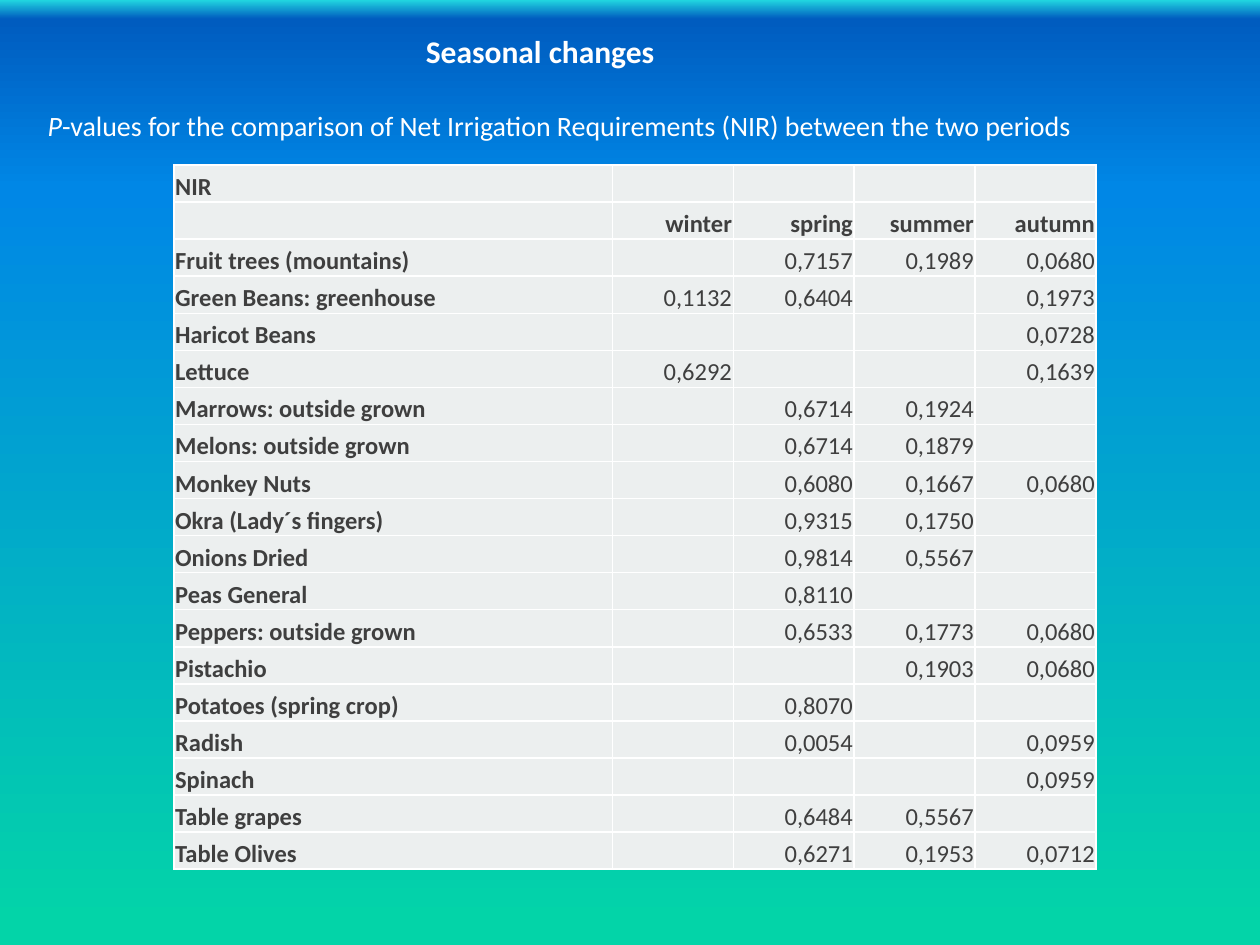
from pptx import Presentation
from pptx.dml.color import RGBColor as RGB
from pptx.enum.text import MSO_ANCHOR as Anchor, MSO_AUTO_SIZE as Fit, PP_ALIGN as Align
from pptx.oxml.ns import qn
from pptx.util import Inches as In, Pt
from lxml.etree import SubElement as Sub

WHITE = RGB(0xFF, 0xFF, 0xFF)
INK = RGB(0x3F, 0x3F, 0x3F)
PALE = RGB(0xEC, 0xEF, 0xEF)
# Background stops: percent and colour
STOPS = [(0, RGB(0x21, 0xD6, 0xE0)), (2, RGB(0x00, 0x5C, 0xBF)),
         (20, RGB(0x00, 0x87, 0xE6)), (98, RGB(0x03, 0xD4, 0xA8))]
FONT = "Calibri"

# Table geometry in inches
LEFT, TOP, HIGH = 1.38, 1.31, 5.59
NAME_W, VALUE_W = 3.48, 0.96

# Crop, winter, spring, summer, autumn
ROWS = [
    ("NIR", "", "", "", ""),
    ("", "winter", "spring", "summer", "autumn"),
    ("Fruit trees (mountains)", "", "0,7157", "0,1989", "0,0680"),
    ("Green Beans: greenhouse", "0,1132", "0,6404", "", "0,1973"),
    ("Haricot Beans", "", "", "", "0,0728"),
    ("Lettuce", "0,6292", "", "", "0,1639"),
    ("Marrows: outside grown", "", "0,6714", "0,1924", ""),
    ("Melons: outside grown", "", "0,6714", "0,1879", ""),
    ("Monkey Nuts", "", "0,6080", "0,1667", "0,0680"),
    ("Okra (Lady´s fingers)", "", "0,9315", "0,1750", ""),
    ("Onions Dried", "", "0,9814", "0,5567", ""),
    ("Peas General", "", "0,8110", "", ""),
    ("Peppers: outside grown", "", "0,6533", "0,1773", "0,0680"),
    ("Pistachio", "", "", "0,1903", "0,0680"),
    ("Potatoes (spring crop)", "", "0,8070", "", ""),
    ("Radish", "", "0,0054", "", "0,0959"),
    ("Spinach", "", "", "", "0,0959"),
    ("Table grapes", "", "0,6484", "0,5567", ""),
    ("Table Olives", "", "0,6271", "0,1953", "0,0712"),
]


def style(run, size, color, bold=False, italic=False):
    font = run.font
    font.name, font.size = FONT, Pt(size)
    font.bold, font.italic = bold, italic
    font.color.rgb = color


def paint(slide):
    """Fill the background with a gradient from top to bottom."""
    fill = slide.background.fill
    fill.gradient()
    fill.gradient_angle = 270
    stops = slide.element.find(".//" + qn("a:gsLst"))
    for old in list(stops):
        stops.remove(old)
    for share, color in STOPS:
        stop = Sub(stops, qn("a:gs"), pos=str(share * 1000))
        Sub(stop, qn("a:srgbClr"), val=str(color))


def setup(frame):
    """Wrapped text from the top left; returns the first paragraph."""
    frame.word_wrap = True
    frame.auto_size = Fit.NONE
    frame.vertical_anchor = Anchor.TOP
    line = frame.paragraphs[0]
    line.alignment = Align.LEFT
    return line


def head(slide):
    title = slide.shapes.title
    title.left, title.top, title.width, title.height = In(3.28), In(0.2), In(6.37), In(0.4)
    line = setup(title.text_frame)
    line.text = "Seasonal changes"
    style(line.runs[0], 18, WHITE, bold=True)


def note(slide):
    """Caption above the table."""
    box = slide.shapes.add_textbox(In(0.28), In(0.81), In(9.37), In(0.38))
    line = setup(box.text_frame)
    for text, slant in (
            ("P", True),
            ("-values for the comparison of Net Irrigation Requirements (NIR)"
             " between the two periods", False)):
        run = line.add_run()
        run.text = text
        style(run, 16, WHITE, italic=slant)


def edge(cell):
    """Draw thin white borders; they precede the fill in the cell's XML."""
    props = cell._tc.get_or_add_tcPr()
    for side in ("a:lnL", "a:lnR", "a:lnT", "a:lnB"):
        line = Sub(props, qn(side), w=str(Pt(1)))
        Sub(Sub(line, qn("a:solidFill")), qn("a:srgbClr"), val=str(WHITE))


def put(cell, text, bold, align):
    cell.margin_left = cell.margin_right = cell.margin_top = In(0.01)
    cell.margin_bottom = 0
    cell.vertical_anchor = Anchor.BOTTOM
    edge(cell)
    cell.fill.solid()
    cell.fill.fore_color.rgb = PALE
    line = cell.text_frame.paragraphs[0]
    line.text = text
    line.alignment = align
    for run in line.runs:
        style(run, 14, INK, bold)
    if not text:  # keeps an empty cell from stretching its row
        Sub(line._p, qn("a:endParaRPr"), sz="1400")


def grid(slide):
    count = len(ROWS[0])
    wide = NAME_W + VALUE_W * (count - 1)
    table = slide.shapes.add_table(len(ROWS), count, In(LEFT), In(TOP),
                                   In(wide), In(HIGH)).table
    table.horz_banding = False
    for c, col in enumerate(table.columns):
        col.width = In(VALUE_W if c else NAME_W)
    for r, row in enumerate(ROWS):
        for c, text in enumerate(row):
            put(table.cell(r, c), text, bold=c == 0 or r < 2,
                align=Align.RIGHT if c else Align.LEFT)


def main():
    deck = Presentation()
    deck.slide_width, deck.slide_height = In(10), In(7.5)
    slide = deck.slides.add_slide(deck.slide_layouts[5])
    paint(slide)
    head(slide)
    note(slide)
    grid(slide)
    deck.save("out.pptx")


if __name__ == "__main__":
    main()
